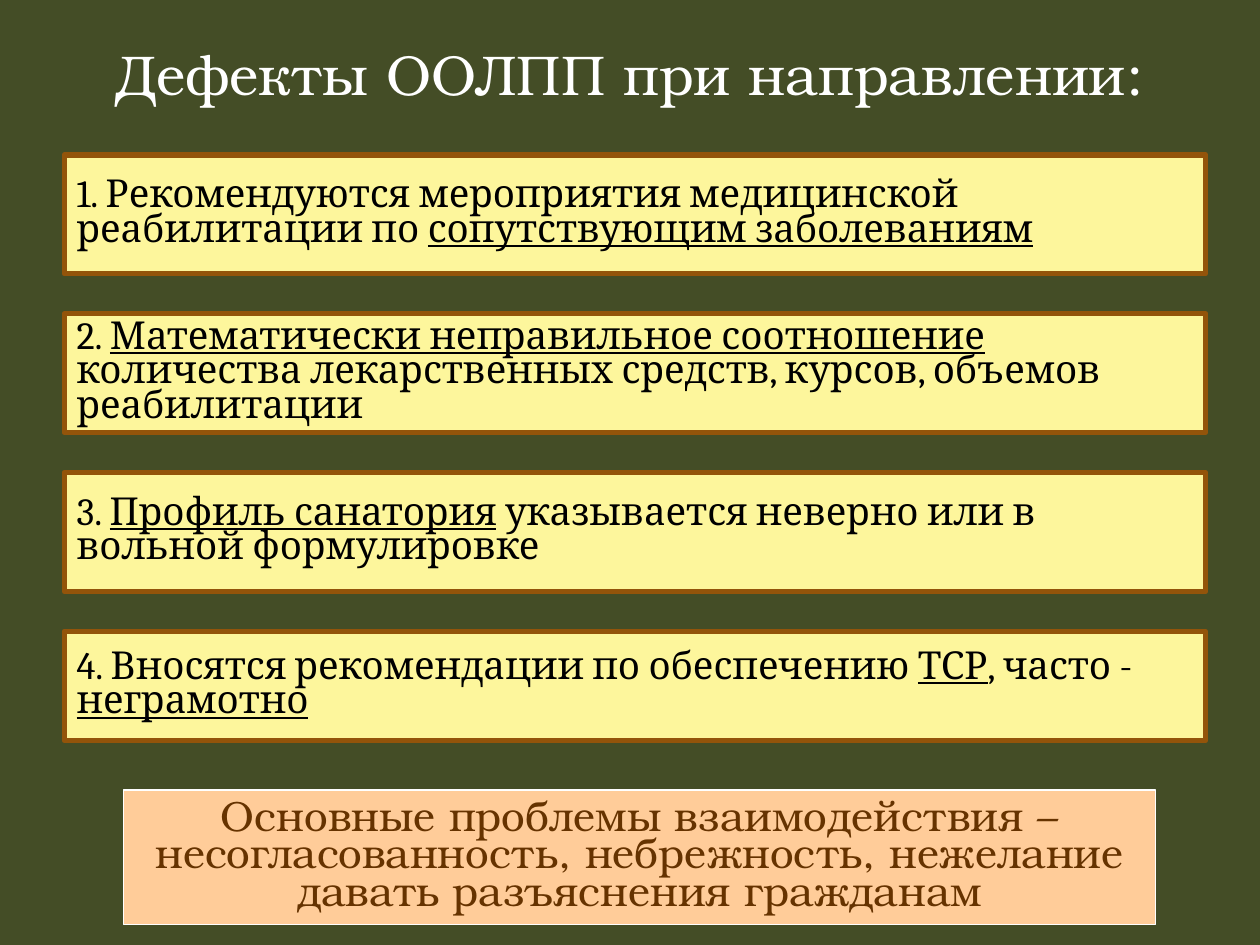
"""Build a slide listing referral defects, with a concluding banner."""
from pptx import Presentation
from pptx.dml.color import RGBColor
from pptx.enum.shapes import MSO_SHAPE
from pptx.enum.text import MSO_ANCHOR, PP_ALIGN
from pptx.util import Pt

TITLE = "Дефекты ООЛПП при направлении:"
DEFECTS = [
    [("1. Рекомендуются мероприятия медицинской реабилитации по ", False),
     ("сопутствующим заболеваниям", True)],
    [("2. ", False), ("Математически неправильное соотношение ", True),
     ("количества лекарственных средств, курсов, объемов реабилитации", False)],
    [("3. ", False), ("Профиль санатория", True),
     (" указывается неверно или в вольной формулировке", False)],
    [("4. Вносятся рекомендации по обеспечению ", False), ("ТСР", True),
     (", часто - ", False), ("неграмотно", True)],
]
CONCLUSION = ("Основные проблемы взаимодействия – несогласованность, "
              "небрежность, нежелание давать разъяснения гражданам")

GREEN = RGBColor(0x44, 0x4D, 0x26)
YELLOW = RGBColor(0xFD, 0xF6, 0x9C)
BROWN = RGBColor(0x93, 0x54, 0x0A)
PEACH = RGBColor(0xFF, 0xCC, 0x99)
DARK_BROWN = RGBColor(0x66, 0x33, 0x00)
WHITE = RGBColor(0xFF, 0xFF, 0xFF)
BLACK = RGBColor(0, 0, 0)

HEADING_FONT = "TeX Gyre Bonum"
BODY_FONT = "Cambria"
BOX_LEFT, BOX_TOP, BOX_WIDTH, BOX_PITCH = 36.7, 88.5, 652.3, 90.75
BOX_HEIGHTS = [68, 68, 68, 62.5]


def add_box(slide, left, top, width, height, fill, line, line_width):
    shape = slide.shapes.add_shape(
        MSO_SHAPE.RECTANGLE, Pt(left), Pt(top), Pt(width), Pt(height))
    shape.shadow.inherit = False
    shape.fill.solid()
    shape.fill.fore_color.rgb = fill
    shape.line.color.rgb = line
    shape.line.width = Pt(line_width)
    return shape


def write_text(shape, runs, font_name, size, color, alignment):
    frame = shape.text_frame
    frame.word_wrap = True
    frame.vertical_anchor = MSO_ANCHOR.MIDDLE
    paragraph = frame.paragraphs[0]
    paragraph.alignment = alignment
    paragraph.line_spacing = 0.75
    paragraph.space_before = Pt(0)
    for text, underlined in runs:
        run = paragraph.add_run()
        run.text = text
        run.font.name = font_name
        run.font.size = Pt(size)
        run.font.color.rgb = color
        run.font.underline = underlined


def main():
    presentation = Presentation()
    presentation.slide_width, presentation.slide_height = Pt(720), Pt(540)
    slide = presentation.slides.add_slide(presentation.slide_layouts[5])
    slide.background.fill.solid()
    slide.background.fill.fore_color.rgb = GREEN

    title = slide.shapes.title
    title.left, title.top, title.width, title.height = Pt(42.5), Pt(26), Pt(635), Pt(39.5)
    write_text(title, [(TITLE, False)], HEADING_FONT, 32, WHITE, PP_ALIGN.CENTER)

    for index, (runs, height) in enumerate(zip(DEFECTS, BOX_HEIGHTS)):
        box = add_box(slide, BOX_LEFT, BOX_TOP + index * BOX_PITCH, BOX_WIDTH, height,
                      YELLOW, BROWN, 3)
        write_text(box, runs, BODY_FONT, 22, BLACK, PP_ALIGN.LEFT)

    banner = add_box(slide, 70.6, 451.5, 589.7, 77, PEACH, WHITE, 0.75)
    write_text(banner, [(CONCLUSION, False)], HEADING_FONT, 24, DARK_BROWN, PP_ALIGN.CENTER)

    presentation.save("out.pptx")


if __name__ == "__main__":
    main()
